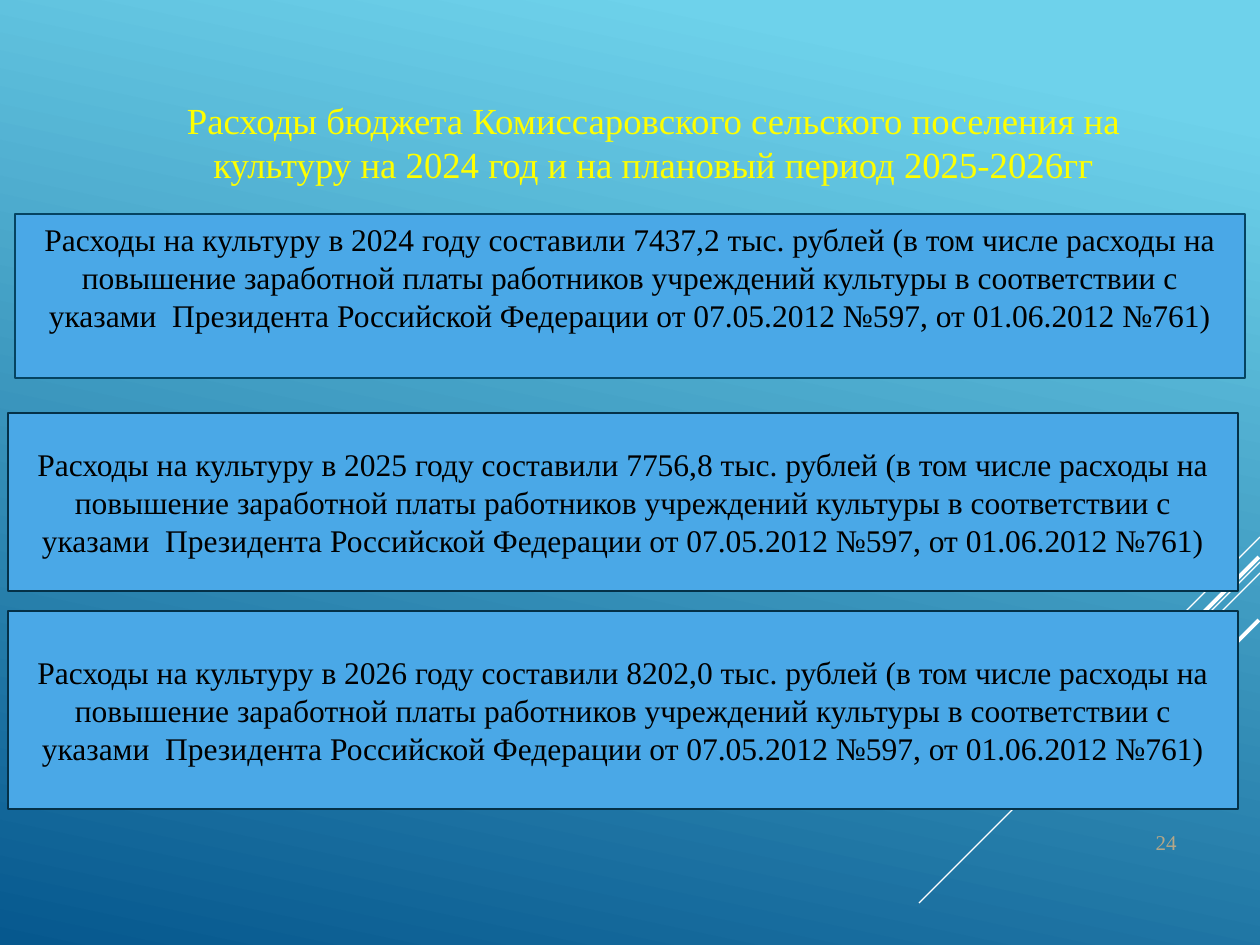
from dataclasses import dataclass

from lxml.etree import SubElement
from pptx import Presentation
from pptx.dml.color import RGBColor
from pptx.enum.shapes import MSO_CONNECTOR, MSO_SHAPE
from pptx.enum.text import MSO_ANCHOR as Anchor, MSO_AUTO_SIZE as AutoSize, PP_ALIGN as Align
from pptx.oxml.ns import qn
from pptx.shapes.base import BaseShape
from pptx.slide import Slide
from pptx.util import Emu, Pt

PX_PER_INCH = 126
FONT = "Times New Roman"
SKY = RGBColor(0x6E, 0xD2, 0xEB)
DEEP_BLUE = RGBColor(0x06, 0x58, 0x8E)
PANEL_BLUE = RGBColor(0x4A, 0xA8, 0xE7)
TOP_EDGE = RGBColor(0x05, 0x43, 0x61)
EDGE = RGBColor(0x04, 0x31, 0x48)
YELLOW = RGBColor(0xFF, 0xFF, 0x00)
SAND = RGBColor(0xB5, 0xA7, 0x88)
WHITE = RGBColor(0xFF, 0xFF, 0xFF)
BLACK = RGBColor(0x00, 0x00, 0x00)


@dataclass(frozen=True)
class Stripe:
    right: int
    top: int
    length: int
    weight: float


@dataclass(frozen=True)
class Frame:
    left: int
    top: int
    width: int
    height: int


@dataclass(frozen=True)
class YearPanel:
    frame: Frame
    year: int
    amount: str
    edge: RGBColor
    anchor: Anchor


STRIPES = (
    Stripe(1260, 537, 105, 0.75),
    Stripe(1260, 562, 341, 0.75),
    Stripe(1260, 573, 217, 0.75),
    Stripe(1259, 557, 199, 2.25),
    Stripe(1259, 620, 143, 2.25),
)
PANELS = (
    YearPanel(Frame(15, 214, 1230, 164), 2024, "7437,2", TOP_EDGE, Anchor.TOP),
    YearPanel(Frame(8, 413, 1230, 178), 2025, "7756,8", EDGE, Anchor.MIDDLE),
    YearPanel(Frame(8, 611, 1230, 198), 2026, "8202,0", EDGE, Anchor.MIDDLE),
)


def px(value: int) -> Emu:
    return Emu(round(value * 914400 / PX_PER_INCH))


def place(shape: BaseShape, frame: Frame) -> None:
    shape.left, shape.top = px(frame.left), px(frame.top)
    shape.width, shape.height = px(frame.width), px(frame.height)


def write(shape: BaseShape, text: str, size: int, color: RGBColor,
          align: Align, anchor: Anchor) -> None:
    box = shape.text_frame
    box.text = text
    box.word_wrap = True
    box.auto_size = AutoSize.NONE
    box.vertical_anchor = anchor
    para = box.paragraphs[0]
    para.alignment = align
    para.font.name = FONT
    para.font.size = Pt(size)
    para.font.color.rgb = color


def paint_background(page: Slide) -> None:
    fill = page.background.fill
    fill.gradient()
    fill.gradient_angle = 258
    for stop, position, color in zip(fill.gradient_stops, (0.1, 1), (SKY, DEEP_BLUE)):
        stop.position = position
        stop.color.rgb = color


def draw_stripe(page: Slide, stripe: Stripe) -> None:
    line = page.shapes.add_connector(
        MSO_CONNECTOR.STRAIGHT, px(stripe.right), px(stripe.top),
        px(stripe.right - stripe.length), px(stripe.top + stripe.length))
    line.line.color.rgb = WHITE
    line.line.width = Pt(stripe.weight)
    SubElement(line._element.spPr, qn("a:effectLst"))


def draw_panel(page: Slide, panel: YearPanel) -> None:
    shape = page.shapes.add_shape(MSO_SHAPE.RECTANGLE, 0, 0, 0, 0)
    place(shape, panel.frame)
    shape.shadow.inherit = False
    shape.fill.solid()
    shape.fill.fore_color.rgb = PANEL_BLUE
    shape.line.color.rgb = panel.edge
    shape.line.width = Pt(1)
    text = (
        f"Расходы на культуру в {panel.year} году составили {panel.amount} тыс. рублей "
        "(в том числе расходы на повышение заработной платы работников учреждений "
        "культуры в соответствии с указами  Президента Российской Федерации "
        "от 07.05.2012 №597, от 01.06.2012 №761)"
    )
    write(shape, text, 18, BLACK, Align.CENTER, panel.anchor)


def main() -> None:
    deck = Presentation()
    deck.slide_width, deck.slide_height = px(1260), px(945)
    page = deck.slides.add_slide(deck.slide_layouts[5])
    paint_background(page)
    for stripe in STRIPES:
        draw_stripe(page, stripe)

    number = page.shapes.add_textbox(0, 0, 0, 0)
    place(number, Frame(1071, 769, 118, 92))
    write(number, "24", 12, SAND, Align.RIGHT, Anchor.BOTTOM)

    title = page.shapes.title
    place(title, Frame(113, 91, 1081, 102))
    write(title, "Расходы бюджета Комиссаровского сельского поселения на культуру "
          "на 2024 год и на плановый период 2025-2026гг",
          21, YELLOW, Align.CENTER, Anchor.TOP)

    for panel in PANELS:
        draw_panel(page, panel)
    deck.save("out.pptx")


if __name__ == "__main__":
    main()
